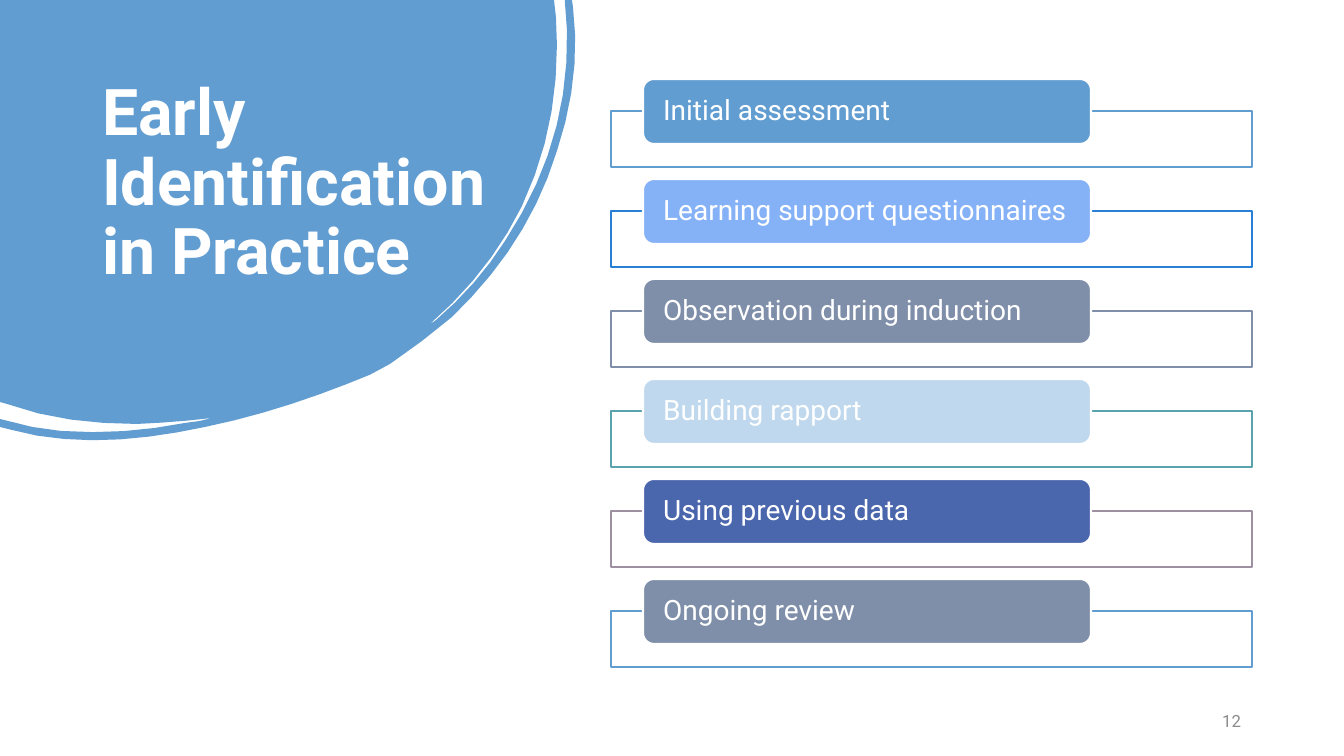
from dataclasses import dataclass
from math import dist

from lxml import etree
from pptx import Presentation
from pptx.dml.color import RGBColor
from pptx.enum.shapes import MSO_SHAPE
from pptx.enum.text import MSO_ANCHOR, MSO_AUTO_SIZE, PP_ALIGN
from pptx.oxml.ns import qn
from pptx.util import Emu, Pt

RECT, ROUND_RECT = MSO_SHAPE.RECTANGLE, MSO_SHAPE.ROUNDED_RECTANGLE
TOP, MIDDLE = MSO_ANCHOR.TOP, MSO_ANCHOR.MIDDLE
LEFT, RIGHT = PP_ALIGN.LEFT, PP_ALIGN.RIGHT
NO_AUTOFIT = MSO_AUTO_SIZE.NONE
EMU_PER_PX = 914400 / 100.8
TITLE_ONLY = 5


@dataclass(frozen=True)
class Theme:
    font: str = "Roboto"
    white: str = "FFFFFF"
    sky: str = "629DD1"
    blue: str = "297FD5"
    light_blue: str = "85B2F6"
    slate: str = "7F8FA9"
    pale: str = "C0D8ED"
    teal: str = "5AA2AE"
    indigo: str = "4A66AC"
    mauve: str = "9D90A0"
    grey: str = "8C8C8C"
    title_pt: int = 46
    step_pt: int = 20
    number_pt: int = 12
    line_pt: float = 1.5


@dataclass(frozen=True)
class Box:
    x: int
    y: int
    w: int
    h: int

    def emu(self) -> list[Emu]:
        return [px(v) for v in (self.x, self.y, self.w, self.h)]


@dataclass(frozen=True)
class Step:
    label: str
    bar: str
    frame: str


THEME = Theme()
STEPS = [
    Step("Initial assessment", THEME.sky, THEME.sky),
    Step("Learning support questionnaires", THEME.light_blue, THEME.blue),
    Step("Observation during induction", THEME.slate, THEME.slate),
    Step("Building rapport", THEME.pale, THEME.teal),
    Step("Using previous data", THEME.indigo, THEME.mauve),
    Step("Ongoing review", THEME.slate, THEME.sky),
]
STEP_PITCH = 100
TITLE_BOX = Box(92, 75, 426, 240)
NUMBER_BOX = Box(949, 701, 302, 40)

# Blob outline from the slide corner: pairs are lines, sixes are cubic curves
BLOB = [
    (554, 0), (556, 17), (557, 26, 557, 36, 557, 45),
    (557, 102, 546, 155, 522, 206), (500, 251, 469, 290, 430, 324),
    (435, 321), (463, 297, 486, 271, 505, 241),
    (547, 177, 569, 108, 567, 30), (567, 21, 566, 12, 565, 3),
    (565, 0), (572, 0), (573, 7), (579, 54, 573, 103, 557, 151),
    (537, 216, 501, 270, 452, 317), (443, 326, 432, 334, 422, 341),
    (412, 349, 402, 356, 390, 364), (378, 372, 363, 378, 347, 384),
    (301, 402, 254, 417, 205, 427), (158, 437, 111, 443, 64, 439),
    (45, 437, 28, 435, 12, 430), (0, 427), (0, 419), (4, 420),
    (23, 426, 42, 429, 61, 431), (104, 434, 144, 431, 185, 423),
    (200, 421), (212, 418), (187, 421, 162, 423, 137, 424),
    (93, 424, 48, 419, 7, 404), (0, 402),
]
CHORD = 30


def px(value: float) -> Emu:
    return Emu(round(value * EMU_PER_PX))


def rgb(value: str) -> RGBColor:
    return RGBColor.from_string(value)


def trace(segments: list[tuple[int, ...]]) -> list[tuple[int, int]]:
    """Turn lines and cubic curves into points in EMU, about one per chord."""
    points, x0, y0 = [], 0, 0
    for seg in segments:
        if len(seg) == 2:
            points.append(seg)
        else:
            x1, y1, x2, y2, x3, y3 = seg
            count = max(1, round(dist((x0, y0), (x3, y3)) / CHORD))
            for i in range(1, count + 1):
                t = i / count
                u = 1 - t
                a, b, c, d = u**3, 3 * u * u * t, 3 * u * t * t, t**3
                points.append((a * x0 + b * x1 + c * x2 + d * x3,
                               a * y0 + b * y1 + c * y2 + d * y3))
        x0, y0 = seg[-2:]
    return [(px(x), px(y)) for x, y in points]


def write(sp, text: str, size: int, color: str, anchor, align,
          inset: int | None = None, bold: bool = False, spacing: float = 1.0) -> None:
    tf = sp.text_frame
    frame_format = {"word_wrap": True, "auto_size": NO_AUTOFIT,
                    "vertical_anchor": anchor}
    if inset is not None:
        frame_format |= {"margin_left": px(inset), "margin_right": px(inset),
                         "margin_top": 0, "margin_bottom": 0}
    for name, value in frame_format.items():
        setattr(tf, name, value)
    p = tf.paragraphs[0]
    p.alignment, p.line_spacing = align, spacing
    r = p.add_run()
    r.text = text
    for name, value in {"name": THEME.font, "size": Pt(size), "bold": bold}.items():
        setattr(r.font, name, value)
    r.font.color.rgb = rgb(color)


def paint(sp, fill: str, line: str | None = None) -> None:
    sp.shadow.inherit = False
    sp.fill.solid()
    sp.fill.fore_color.rgb = rgb(fill)
    if line is None:
        sp.line.fill.background()
    else:
        sp.line.color.rgb = rgb(line)
        sp.line.width = Pt(THEME.line_pt)


def add_blob(s):
    builder = s.shapes.build_freeform(0, 0)
    builder.add_line_segments(trace(BLOB), close=True)
    sp = builder.convert_to_shape()
    paint(sp, THEME.sky)
    return sp


def add_step(s, step: Step, index: int) -> None:
    dy = index * STEP_PITCH
    frame = s.shapes.add_shape(RECT, *Box(611, 111 + dy, 641, 56).emu())
    paint(frame, THEME.white, step.frame)
    color = frame.element.spPr.find(qn("a:solidFill"))[0]
    etree.SubElement(color, qn("a:alpha"), val="90000")
    bar = s.shapes.add_shape(ROUND_RECT, *Box(643, 79 + dy, 448, 65).emu())
    paint(bar, step.bar, THEME.white)
    write(bar, step.label, THEME.step_pt, THEME.white, MIDDLE, LEFT,
          inset=17, spacing=0.9)


def main() -> None:
    prs = Presentation()
    prs.slide_width, prs.slide_height = px(1344), px(756)
    s = prs.slides.add_slide(prs.slide_layouts[TITLE_ONLY])

    # Blob with the title in front of it
    title = s.shapes.title
    add_blob(s).element.addnext(title.element)
    title.left, title.top, title.width, title.height = TITLE_BOX.emu()
    write(title, "Early Identification in Practice", THEME.title_pt,
          THEME.white, TOP, LEFT, bold=True, spacing=0.9)

    # Page number
    number = s.shapes.add_textbox(*NUMBER_BOX.emu())
    write(number, "12", THEME.number_pt, THEME.grey, MIDDLE, RIGHT)

    # Steps
    for index, step in enumerate(STEPS):
        add_step(s, step, index)

    prs.save("out.pptx")


if __name__ == "__main__":
    main()
